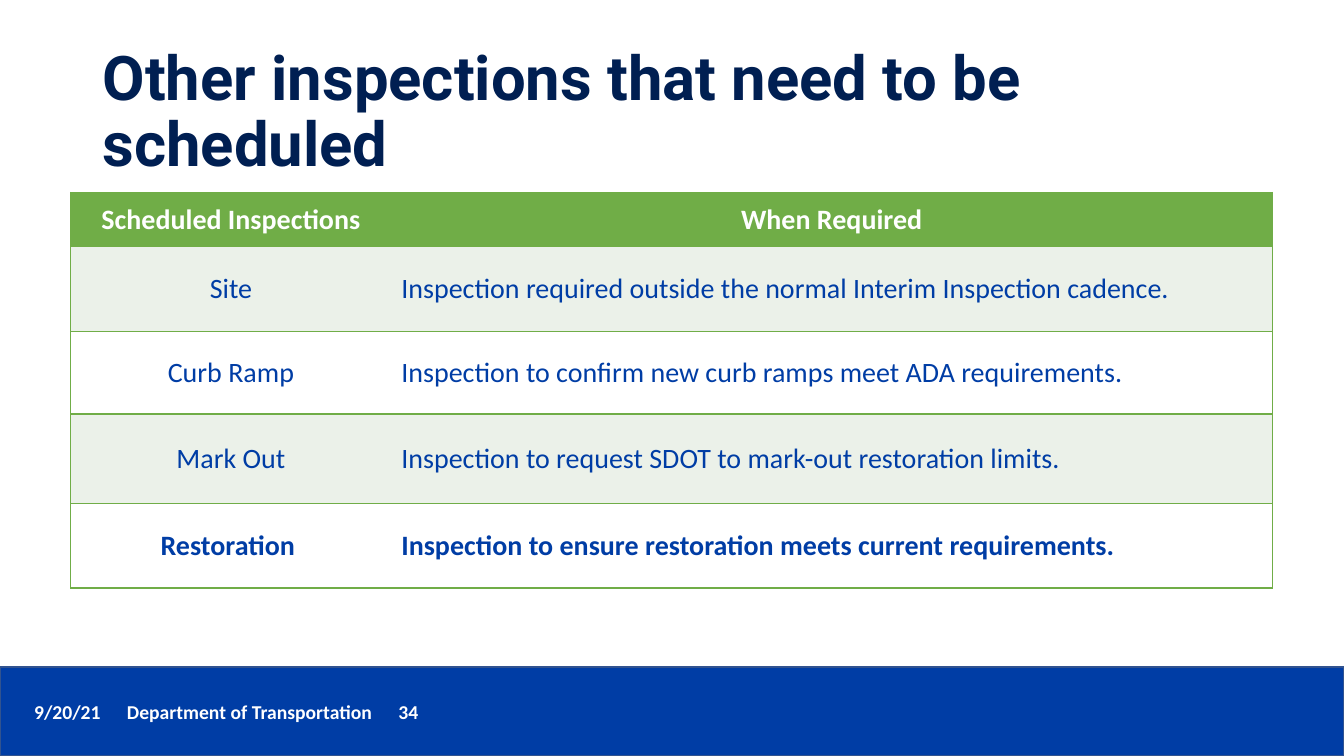
from lxml import etree
from pptx import Presentation
from pptx.dml.color import RGBColor
from pptx.enum.shapes import MSO_SHAPE
from pptx.enum.text import MSO_ANCHOR, PP_ALIGN
from pptx.oxml.ns import qn
from pptx.util import Cm, Pt

RECTANGLE = MSO_SHAPE.RECTANGLE
MIDDLE, TOP = MSO_ANCHOR.MIDDLE, MSO_ANCHOR.TOP
LEFT, CENTER = PP_ALIGN.LEFT, PP_ALIGN.CENTER

WHITE = RGBColor(0xFF, 0xFF, 0xFF)
BLUE = RGBColor(0x00, 0x3D, 0xA5)
BAR_EDGE = RGBColor(0x31, 0x53, 0x8F)
NAVY = RGBColor(0x00, 0x1F, 0x52)
GREEN = RGBColor(0x70, 0xAD, 0x47)
PALE_GREEN = RGBColor(0xEB, 0xF1, 0xE9)

TITLE_FORMAT = {"name": "Roboto", "size": Pt(44), "bold": True}
FOOTER_FORMAT = {"name": "Calibri", "size": Pt(14), "bold": True}
CELL_FORMAT = {"name": "Calibri", "size": Pt(20), "bold": False}

COLUMN_WIDTHS = (8.08, 22.2)
ROW_HEIGHTS = (1.37, 2.13, 2.08, 2.26, 2.13)
INSPECTIONS = (
    ("Scheduled Inspections", "When Required"),
    ("Site", "Inspection required outside the normal Interim Inspection cadence."),
    ("Curb Ramp", "Inspection to confirm new curb ramps meet ADA requirements."),
    ("Mark Out", "Inspection to request SDOT to mark-out restoration limits."),
    ("Restoration ", "Inspection to ensure restoration meets current requirements."),
)


class InspectionSlide:
    def __init__(self, presentation):
        self.slide = presentation.slides.add_slide(presentation.slide_layouts[6])

    def styled_run(self, paragraph, text, color, formats, align=LEFT):
        paragraph.alignment = align
        run = paragraph.add_run()
        run.text = text
        for attribute, value in formats.items():
            setattr(run.font, attribute, value)
        run.font.color.rgb = color

    def bar(self, left, top, width, height):
        band = self.slide.shapes.add_shape(
            RECTANGLE, Cm(left), Cm(top), Cm(width), Cm(height))
        band.shadow.inherit = False
        band.fill.solid()
        band.fill.fore_color.rgb = BLUE
        band.line.color.rgb = BAR_EDGE
        band.line.width = Pt(1)

    def text(self, box, text, color, formats, anchor=TOP, spacing=1.0, tabs=()):
        frame = self.slide.shapes.add_textbox(*map(Cm, box)).text_frame
        frame.word_wrap = True
        frame.vertical_anchor = anchor
        paragraph = frame.paragraphs[0]
        paragraph.line_spacing = spacing
        if tabs:
            stops = etree.SubElement(paragraph._p.get_or_add_pPr(), qn("a:tabLst"))
            for position in tabs:
                etree.SubElement(stops, qn("a:tab"), pos=str(Cm(position)), algn="l")
        self.styled_run(paragraph, text, color, formats)

    def borders(self, cell, hidden_side):
        properties = cell._tc.get_or_add_tcPr()
        for side in ("lnL", "lnR", "lnT", "lnB"):
            edge = etree.SubElement(properties, qn(f"a:{side}"), w=str(Pt(1)))
            if side == hidden_side:
                etree.SubElement(edge, qn("a:noFill"))
            else:
                fill = etree.SubElement(edge, qn("a:solidFill"))
                etree.SubElement(fill, qn("a:srgbClr"), val=str(GREEN))

    def table(self, left, top, rows):
        grid = self.slide.shapes.add_table(
            len(rows), len(COLUMN_WIDTHS), Cm(left), Cm(top),
            Cm(sum(COLUMN_WIDTHS)), Cm(sum(ROW_HEIGHTS))).table
        grid.first_row = grid.horz_banding = False
        for column, width in zip(grid.columns, COLUMN_WIDTHS):
            column.width = Cm(width)
        for r, (row, height) in enumerate(zip(rows, ROW_HEIGHTS)):
            grid.rows[r].height = Cm(height)
            header = r == 0
            shade = GREEN if header else (WHITE, PALE_GREEN)[r % 2]
            formats = {**CELL_FORMAT, "bold": r in (0, len(rows) - 1)}
            for c, text in enumerate(row):
                cell = grid.cell(r, c)
                self.borders(cell, "lnL" if c else "lnR")
                cell.fill.solid()
                cell.fill.fore_color.rgb = shade
                cell.vertical_anchor = MIDDLE
                self.styled_run(cell.text_frame.paragraphs[0], text,
                                WHITE if header else BLUE, formats,
                                CENTER if header or c == 0 else LEFT)


def main():
    presentation = Presentation()
    presentation.slide_width = Cm(33.87)
    presentation.slide_height = Cm(19.05)
    page = InspectionSlide(presentation)
    page.bar(0, 16.81, 33.87, 2.24)
    page.text((0.61, 17.5, 26.16, 0.86), "9/20/21\tDepartment of Transportation\t34",
              WHITE, FOOTER_FORMAT, tabs=(2.34, 9.18))
    page.text((2.34, 1.02, 29.21, 3.68), "Other inspections that need to be scheduled",
              NAVY, TITLE_FORMAT, anchor=MIDDLE, spacing=0.9)
    page.table(1.78, 4.85, INSPECTIONS)
    presentation.save("out.pptx")


if __name__ == "__main__":
    main()
